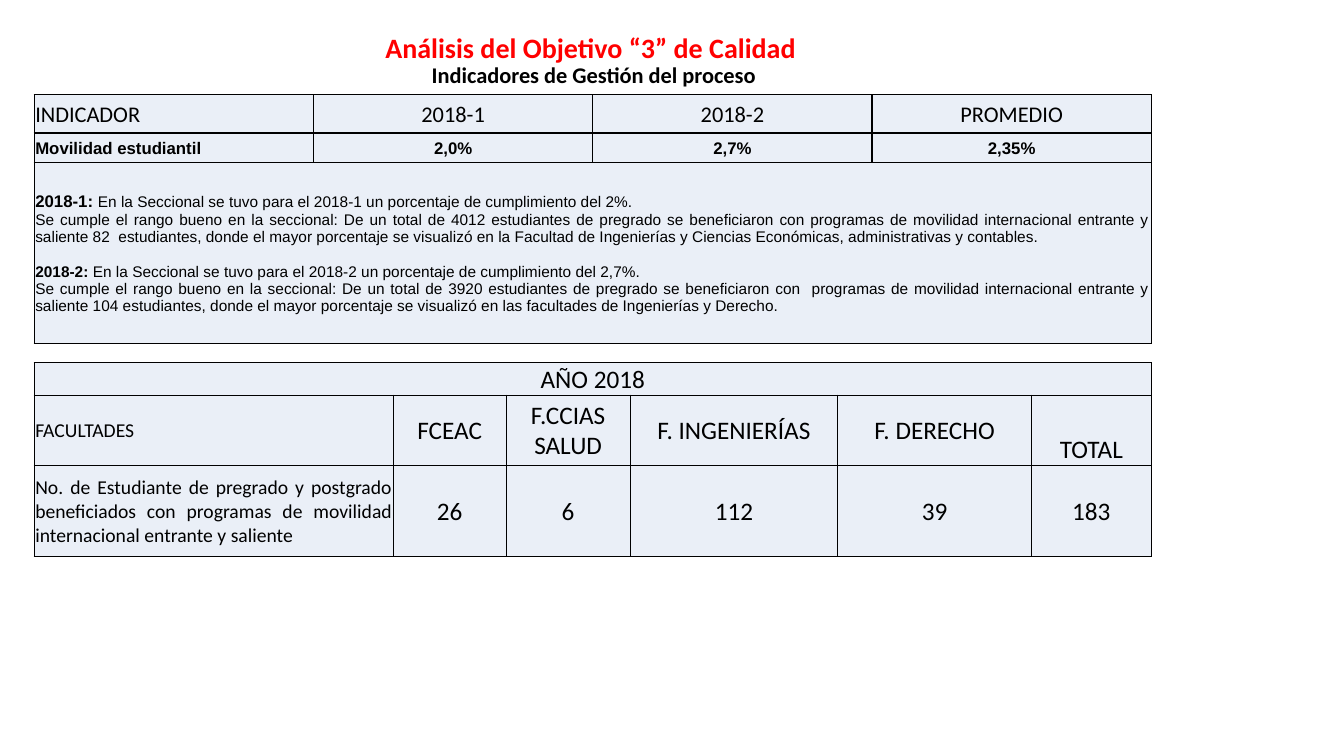
"""Build the student mobility indicators slide with its two tables."""
from lxml import etree
from pptx import Presentation
from pptx.dml.color import RGBColor
from pptx.enum import text
from pptx.oxml import ns
from pptx.util import Inches, Pt

RED = RGBColor(0xFF, 0x00, 0x00)
BLACK = RGBColor(0x00, 0x00, 0x00)
PALE_BLUE = RGBColor(0xEA, 0xEF, 0xF7)
LEFT, CENTER, JUSTIFY = text.PP_ALIGN.LEFT, text.PP_ALIGN.CENTER, text.PP_ALIGN.JUSTIFY
MIDDLE, BOTTOM = text.MSO_ANCHOR.MIDDLE, text.MSO_ANCHOR.BOTTOM


def add_run(p, words, size, font="Calibri", bold=False, color=BLACK):
    r = p.add_run()
    r.text = words
    r.font.size = Pt(size)
    r.font.name = font
    r.font.bold = bold
    r.font.color.rgb = color


def add_grid(s, top, widths, heights):
    shape = s.shapes.add_table(len(heights), len(widths), Inches(0.34), Inches(top),
                               Inches(sum(widths)), Inches(sum(heights)))
    table = shape.table
    for column, width in zip(table.columns, widths):
        column.width = Inches(width)
    for row, height in zip(table.rows, heights):
        row.height = Inches(height)
    for cell in table.iter_cells():
        cell.margin_left = cell.margin_right = cell.margin_top = Inches(0.01)
        cell.margin_bottom = 0
        cell.vertical_anchor = MIDDLE
        tc_pr = cell._tc.get_or_add_tcPr()
        for side in ("a:lnL", "a:lnR", "a:lnT", "a:lnB"):
            line = etree.SubElement(tc_pr, ns.qn(side), w=str(Pt(1)))
            solid = etree.SubElement(line, ns.qn("a:solidFill"))
            etree.SubElement(solid, ns.qn("a:srgbClr"), val=str(BLACK))
        cell.fill.solid()
        cell.fill.fore_color.rgb = PALE_BLUE
    return table


prs = Presentation()
prs.slide_width, prs.slide_height = Inches(13.33), Inches(7.5)
s = prs.slides.add_slide(prs.slide_layouts[5])

title = s.shapes.title
title.left, title.top = Inches(0.46), Inches(0.52)
title.width, title.height = Inches(10.86), Inches(0.69)
tf = title.text_frame
tf.word_wrap = True
tf.auto_size = text.MSO_AUTO_SIZE.NONE
tf.vertical_anchor = BOTTOM
tf.margin_bottom = Inches(0.33)
p = tf.paragraphs[0]
p.alignment = CENTER
p.line_spacing = 0.9
add_run(p, "Análisis del Objetivo “3” de Calidad ", 20, bold=True, color=RED)
p.add_line_break()
add_run(p, "Indicadores de Gestión del proceso", 16, bold=True)

indicators = add_grid(s, 0.94, [2.77] * 4, [0.38, 0.29, 1.8])
indicator_rows = [
    (("INDICADOR", "2018-1", "2018-2", "PROMEDIO"), 16, "Calibri", False),
    (("Movilidad estudiantil", "2,0%", "2,7%", "2,35%"), 12, "Arial", True),
]
for i, (values, size, font, bold) in enumerate(indicator_rows):
    for j, value in enumerate(values):
        p = indicators.cell(i, j).text_frame.paragraphs[0]
        p.alignment = CENTER if j else LEFT
        add_run(p, value, size, font, bold)

analysis = indicators.cell(2, 0)
analysis.merge(indicators.cell(2, 3))
tf = analysis.text_frame
semesters = [
    ("2018-1: ", 12,
     "En la Seccional se tuvo para el 2018-1 un porcentaje de cumplimiento del 2%.",
     "Se cumple el rango bueno en la seccional: De un total de 4012 estudiantes de pregrado "
     "se beneficiaron con programas de movilidad internacional entrante y saliente "
     "82  estudiantes, donde el mayor porcentaje se visualizó en la Facultad de Ingenierías "
     "y Ciencias Económicas, administrativas y contables."),
    ("2018-2:", 11,
     " En la Seccional se tuvo para el 2018-2 un porcentaje de cumplimiento del 2,7%.",
     "Se cumple el rango bueno en la seccional: De un total de 3920 estudiantes de pregrado "
     "se beneficiaron con  programas de movilidad internacional entrante y saliente "
     "104 estudiantes, donde el mayor porcentaje se visualizó en las facultades de "
     "Ingenierías y Derecho."),
]
for i, (semester, size, result, detail) in enumerate(semesters):
    p = tf.add_paragraph() if i else tf.paragraphs[0]
    p.alignment = JUSTIFY
    if i:
        p.space_before = Pt(12.5)
    add_run(p, semester, size, "Arial", True)
    add_run(p, result, 11, "Arial")
    p = tf.add_paragraph()
    p.alignment = JUSTIFY
    add_run(p, detail, 11, "Arial")

faculties = add_grid(s, 3.6, [3.56, 1.12, 1.23, 2.06, 1.92, 1.19], [0.32, 0.7, 0.9])
year = faculties.cell(0, 0)
year.merge(faculties.cell(0, 5))
year.vertical_anchor = BOTTOM
p = year.text_frame.paragraphs[0]
p.alignment = CENTER
add_run(p, "AÑO 2018", 18)

faculty_rows = [
    ("FACULTADES", "FCEAC", "F.CCIAS SALUD", "F. INGENIERÍAS", "F. DERECHO", "TOTAL"),
    ("No. de Estudiante de pregrado y postgrado beneficiados con programas de movilidad "
     "internacional entrante y saliente", "26", "6", "112", "39", "183"),
]
for i, values in enumerate(faculty_rows, 1):
    for j, value in enumerate(values):
        p = faculties.cell(i, j).text_frame.paragraphs[0]
        p.alignment = CENTER if j else JUSTIFY
        add_run(p, value, 18 if j else 14)
faculties.cell(1, 5).vertical_anchor = BOTTOM

prs.save("out.pptx")
